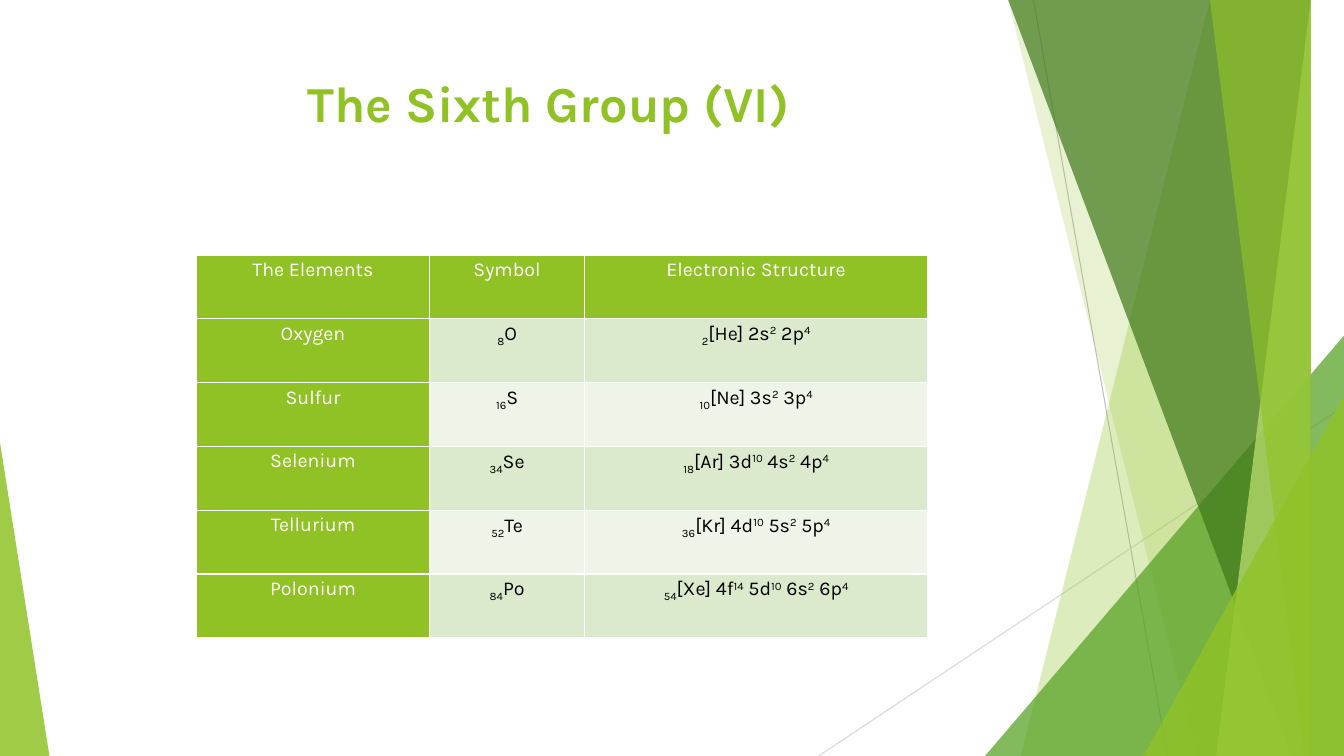
from lxml import etree
from pptx import Presentation
from pptx import util as u
from pptx.dml import color
from pptx.enum import shapes, text
from pptx.oxml import ns

WIDTH, HEIGHT = 13.33, 7.5
GREEN = "90C226"
FONT = "Karla"
BASELINES = {"_": "-25000", "^": "30000"}
LINES = [
    ((10.25, 0), (11.58, HEIGHT), "BFBFBF"),
    ((WIDTH, 4.03), (8.12, HEIGHT), "D9D9D9"),
]
FACETS = [
    ("wedge", (12.28, 10.04), GREEN, 30),
    ("wedge", (10.5, 11.83), GREEN, 20),
    ("triangle", (9.77, 3.33, 3.56, 1), "54A021", 72),
    ("wedge", (10.21, 12.91), "3F7819", 70),
    ("wedge", (13.03, 11.92), "C0E474", 70),
    ("wedge", (11.96, 13.18), GREEN, 65),
    ("triangle", (11.34, 3.93, 1.99, 1), GREEN, 80),
    ("triangle", (0, 4.39, 0.49, 0), GREEN, 85),
]
COLUMNS = [2.31, 1.54, 3.4]
ROWS = [
    ("The Elements", "Symbol", "Electronic Structure"),
    ("Oxygen", "_8|O", "_2|[He] 2s|^2| 2p|^4"),
    ("Sulfur", "_16|S", "_10|[Ne] 3s|^2| 3p|^4"),
    ("Selenium", "_34|Se", "_18|[Ar] 3d|^10| 4s|^2| 4p|^4"),
    ("Tellurium", "_52|Te", "_36|[Kr] 4d|^10| 5s|^2| 5p|^4"),
    ("Polonium", "_84|Po", "_54|[Xe] 4f|^14| 5d|^10| 6s|^2| 6p|^4"),
]


def rgb(value):
    return color.RGBColor.from_string(value)


def set_all(target, values):
    for name, value in values.items():
        setattr(target, name, value)


def format_font(font, size, fill, bold=False):
    set_all(font, {"name": FONT, "size": u.Pt(size), "bold": bold})
    font.color.rgb = rgb(fill)


def paint(shape, fill, opacity):
    shape.shadow.inherit = False
    shape.fill.solid()
    shape.fill.fore_color.rgb = rgb(fill)
    shape.line.fill.background()
    solid = shape.fill._xPr.find(ns.qn("a:solidFill"))
    etree.SubElement(solid[0], ns.qn("a:alpha"), val=str(opacity * 1000))


def add_line(slide, start, end, stroke):
    points = [u.Inches(value) for value in start + end]
    line = slide.shapes.add_connector(shapes.MSO_CONNECTOR.STRAIGHT, *points)
    line.line.color.rgb = rgb(stroke)
    line.line.width = u.Pt(0.75)
    etree.SubElement(line._element.spPr, ns.qn("a:effectLst"))


def add_wedge(slide, top_x, bottom_x):
    builder = slide.shapes.build_freeform(top_x, -0.01, scale=u.Inches(1))
    builder.add_line_segments([(WIDTH, -0.01), (WIDTH, HEIGHT), (bottom_x, HEIGHT)])
    return builder.convert_to_shape()


def add_triangle(slide, left, top, width, apex):
    box = [u.Inches(value) for value in (left, top, width, HEIGHT - top)]
    shape = slide.shapes.add_shape(shapes.MSO_SHAPE.ISOSCELES_TRIANGLE, *box)
    shape.adjustments[0] = apex
    return shape


def add_backdrop(slide):
    for start, end, stroke in LINES:
        add_line(slide, start, end, stroke)
    builders = {"wedge": add_wedge, "triangle": add_triangle}
    for kind, geometry, fill, opacity in FACETS:
        paint(builders[kind](slide, *geometry), fill, opacity)


def add_title(slide, left, top, width, height):
    title = slide.shapes.title
    set_all(title, {"left": u.Inches(left), "top": u.Inches(top),
                    "width": u.Inches(width), "height": u.Inches(height)})
    set_all(title.text_frame, {"text": "The Sixth Group (VI)", "word_wrap": True,
                               "vertical_anchor": text.MSO_ANCHOR.TOP})
    paragraph = title.text_frame.paragraphs[0]
    paragraph.alignment = text.PP_ALIGN.CENTER
    format_font(paragraph.runs[0].font, 36, GREEN, True)


def fill_cell(cell, content, fill, ink):
    cell.fill.solid()
    cell.fill.fore_color.rgb = rgb(fill)
    set_all(cell, {"margin_left": u.Inches(0.07), "margin_right": u.Inches(0.07),
                   "margin_top": 0, "margin_bottom": 0})
    paragraph = cell.text_frame.paragraphs[0]
    set_all(paragraph, {"alignment": text.PP_ALIGN.CENTER, "line_spacing": 1.15})
    for piece in content.split("|"):
        run = paragraph.add_run()
        run.text = piece.lstrip("_^")
        format_font(run.font, 14, ink)
        if piece[0] in BASELINES:
            run._r.get_or_add_rPr().set("baseline", BASELINES[piece[0]])


def add_elements_table(slide, left, top, width, height):
    box = [u.Inches(value) for value in (left, top, width, height)]
    table = slide.shapes.add_table(len(ROWS), len(COLUMNS), *box).table
    table.first_col = True
    for column, column_width in zip(table.columns, COLUMNS):
        column.width = u.Inches(column_width)
    for row, contents in enumerate(ROWS):
        band = "DBE9CD" if row % 2 else "EEF4E8"
        for column, content in enumerate(contents):
            heading = row == 0 or column == 0
            fill, ink = (GREEN, "FFFFFF") if heading else (band, "000000")
            fill_cell(table.cell(row, column), content, fill, ink)


def main():
    presentation = Presentation()
    presentation.slide_width = u.Inches(WIDTH)
    presentation.slide_height = u.Inches(HEIGHT)
    slide = presentation.slides.add_slide(presentation.slide_layouts[5])
    add_backdrop(slide)
    add_title(slide, 0.74, 0.67, 9.4, 1.44)
    add_elements_table(slide, 1.95, 2.53, sum(COLUMNS), 3.8)
    presentation.save("out.pptx")


if __name__ == "__main__":
    main()
